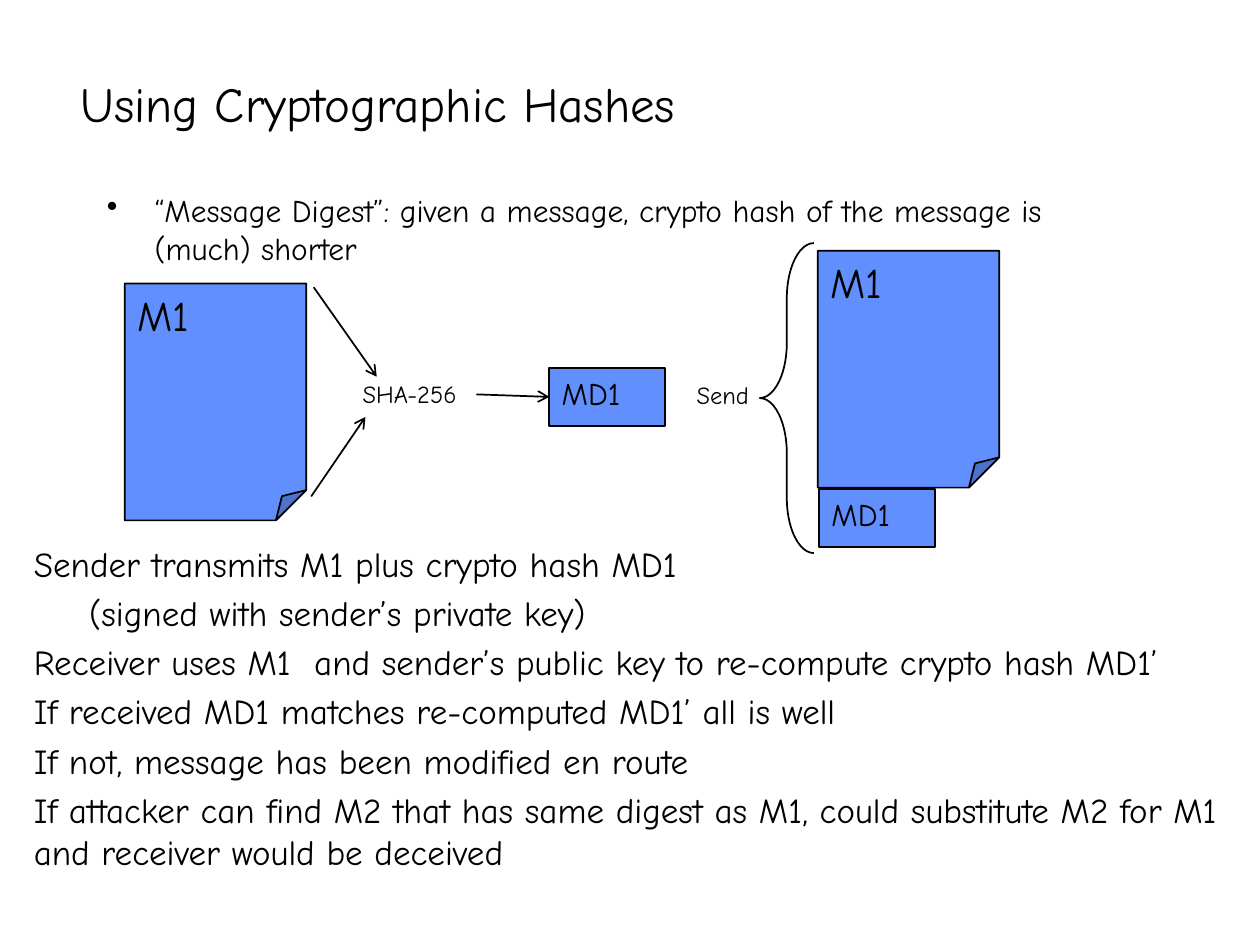
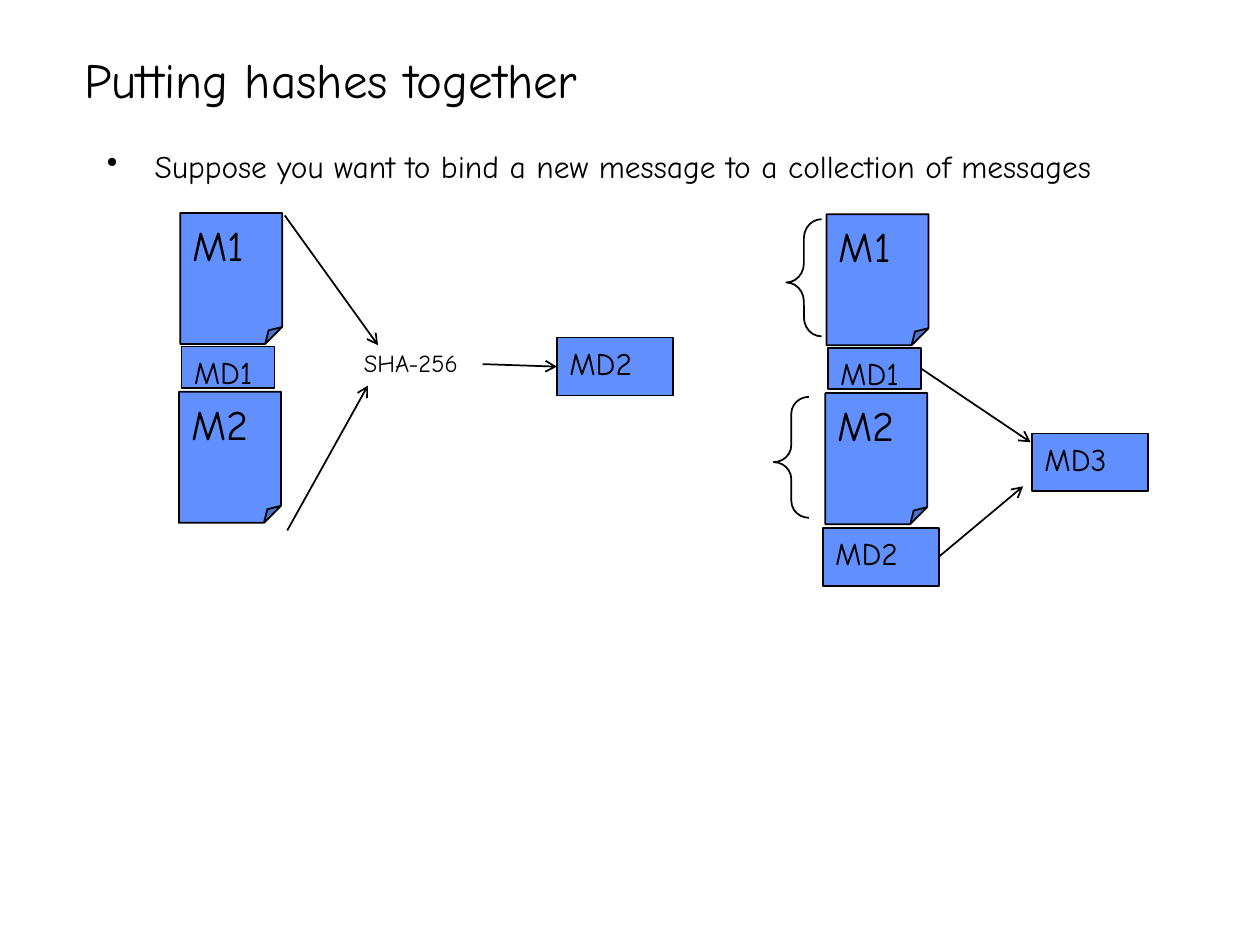
"""Build two slides on message digests and chained cryptographic hashes."""
import pptx
import pptx.dml.color
import pptx.enum.shapes
import pptx.enum.text
import pptx.oxml.ns
import pptx.util
from lxml import etree

Inches = pptx.util.Inches
Pt = pptx.util.Pt
PRESET = pptx.enum.shapes.MSO_SHAPE
ANCHOR = pptx.enum.text.MSO_ANCHOR
TOP, LEFT, BOTTOM, RIGHT = range(4)

THEME = {
    "font": "Comic Neue",
    "ink": pptx.dml.color.RGBColor.from_string("000000"),
    "block": pptx.dml.color.RGBColor.from_string("618FFD"),
    "title": 28, "message": 24, "notes": 20, "body": 18, "digest": 18, "label": 14,
    "line": 1, "space_before": 0.2,
}

FRAME = {
    "word_wrap": True,
    "margin_left": Inches(0.1), "margin_right": Inches(0.1),
    "margin_top": Inches(0.05), "margin_bottom": Inches(0.05),
}

BLOCKS = {
    "page": (PRESET.FOLDED_CORNER, 1.44, 1.88, "message"),
    "small page": (PRESET.FOLDED_CORNER, 0.81, 1.04, "message"),
    "digest": (PRESET.RECTANGLE, 0.92, 0.46, "digest"),
    "small digest": (PRESET.RECTANGLE, 0.74, 0.33, "digest"),
}


def bound_messages(side, left, top):
    """Return the M1, MD1, M2 stack placed from its left and top."""
    parts = [("M1", "small page", 0.01, 0), ("MD1", "small digest", 0.02, 1.06),
             ("M2", "small page", 0, 1.42)]
    return [(f"{side} {text}", text, kind, left + dx, top + dy)
            for text, kind, dx, dy in parts]


SLIDES = [
    {
        "title": ("Using Cryptographic Hashes", 0.54, 0.19),
        "point": ("“Message Digest”: given a message, crypto hash of the message is "
                  "(much) shorter", 0.75, 1.47, 8.4, 0.89),
        "blocks": [
            ("message", "M1", "page", 0.99, 2.25),
            ("digest", "MD1", "digest", 4.36, 2.92),
            ("sent message", "M1", "page", 6.49, 1.99),
            ("sent digest", "MD1", "digest", 6.5, 3.88),
        ],
        "labels": [("SHA-256", 2.78, 2.96), ("Send", 5.43, 2.97)],
        "arrows": [
            ((2.49, 2.28), (2.99, 2.99)),
            ((2.47, 3.94), (2.9, 3.31)),
            ((3.78, 3.13), ("digest", LEFT)),
        ],
        "braces": [(6.03, 1.93, 0.43, 2.46, 1.02, 0.5)],
        "notes": [
            ("Sender transmits M1 plus crypto hash MD1", 0),
            ("(signed with sender’s private key)", 1),
            ("Receiver uses M1  and sender’s public key to re-compute crypto hash MD1’", 0),
            ("If received MD1 matches re-computed MD1’ all is well", 0),
            ("If not, message has been modified en route", 0),
            ("If attacker can find M2 that has same digest as M1, could substitute M2 "
             "for M1 and receiver would be deceived", 0),
        ],
    },
    {
        "title": ("Putting hashes together", 0.57, 0),
        "point": ("Suppose you want to bind a new message to a collection of messages",
                  0.75, 1.12, 8.5, 4.5),
        "blocks": [
            *bound_messages("hashed", 1.42, 1.69),
            ("digest", "MD2", "digest", 4.42, 2.68),
            *bound_messages("sent", 6.55, 1.7),
            ("sent digest", "MD2", "digest", 6.53, 4.19),
            ("next digest", "MD3", "digest", 8.19, 3.44),
        ],
        "labels": [("SHA-256", 2.79, 2.71)],
        "arrows": [
            ((2.26, 1.71), (3, 2.74)),
            ((2.28, 4.21), (2.92, 3.06)),
            ((3.83, 2.89), ("digest", LEFT)),
            (("sent MD1", RIGHT), (8.18, 3.51)),
            (("sent digest", RIGHT), (8.12, 3.86)),
        ],
        "braces": [(6.14, 3.15, 0.28, 0.96, 0.48, 0.54),
                   (6.24, 1.74, 0.28, 0.93, 0.54, 0.54)],
        "notes": [],
    },
]


def apply_format(target, values):
    for attribute, value in values.items():
        setattr(target, attribute, value)


def write(paragraph, text, role):
    run = paragraph.add_run()
    run.text = text
    apply_format(run.font, {"name": THEME["font"], "size": Pt(THEME[role])})
    run.font.color.rgb = THEME["ink"]
    paragraph.alignment = pptx.enum.text.PP_ALIGN.LEFT


def space(paragraph, role):
    paragraph.space_before = Pt(THEME[role] * THEME["space_before"])


def indent(paragraph, margin, first_line, bullet=None):
    properties = paragraph._p.get_or_add_pPr()
    properties.set("marL", str(Inches(margin)))
    properties.set("indent", str(Inches(first_line)))
    if bullet:
        etree.SubElement(properties, pptx.oxml.ns.qn("a:buChar"), char=bullet)


def add_text(slide, box, text, role, anchor=ANCHOR.TOP):
    frame = slide.shapes.add_textbox(*map(Inches, box)).text_frame
    apply_format(frame, {**FRAME, "vertical_anchor": anchor})
    write(frame.paragraphs[0], text, role)
    return frame


def outline(part):
    part.line.color.rgb = THEME["ink"]
    part.line.width = Pt(THEME["line"])


def add_block(slide, text, kind, left, top):
    preset, width, height, role = BLOCKS[kind]
    block = slide.shapes.add_shape(preset, *map(Inches, (left, top, width, height)))
    block.shadow.inherit = False
    block.fill.solid()
    block.fill.fore_color.rgb = THEME["block"]
    outline(block)
    apply_format(block.text_frame, {**FRAME, "vertical_anchor": ANCHOR.TOP})
    write(block.text_frame.paragraphs[0], text, role)
    return block


def add_brace(slide, left, top, width, height, curl, middle):
    brace = slide.shapes.add_shape(PRESET.LEFT_BRACE,
                                   *map(Inches, (left, top, width, height)))
    brace.shadow.inherit = False
    brace.fill.background()
    outline(brace)
    brace.adjustments[0] = curl
    brace.adjustments[1] = middle


def add_arrow(slide, start, end, blocks):
    joined = [point[0] in blocks for point in (start, end)]
    places = [(0, 0) if join else point for join, point in zip(joined, (start, end))]
    arrow = slide.shapes.add_connector(pptx.enum.shapes.MSO_CONNECTOR.STRAIGHT,
                                       *map(Inches, places[0] + places[1]))
    connects = (arrow.begin_connect, arrow.end_connect)
    for join, connect, point in zip(joined, connects, (start, end)):
        if join:
            connect(blocks[point[0]], point[1])
    outline(arrow)
    etree.SubElement(arrow.line._get_or_add_ln(), pptx.oxml.ns.qn("a:tailEnd"), type="arrow")
    etree.SubElement(arrow._element.spPr, pptx.oxml.ns.qn("a:effectLst"))


def add_notes(slide, notes):
    (first, _), *others = notes
    frame = add_text(slide, (0.17, 4.26, 9.83, 2.82), first, "notes")
    space(frame.paragraphs[0], "notes")
    for text, level in others:
        paragraph = frame.add_paragraph()
        write(paragraph, text, "notes")
        space(paragraph, "notes")
        if level:
            paragraph.level = level
            indent(paragraph, 0.44, 0)


def build_slide(deck, content):
    slide = deck.slides.add_slide(deck.slide_layouts[6])
    title, left, top = content["title"]
    add_text(slide, (left, top, 8.5, 1.25), title, "title", ANCHOR.MIDDLE)
    point, *box = content["point"]
    bullet = add_text(slide, box, point, "body").paragraphs[0]
    space(bullet, "body")
    indent(bullet, 0.38, -0.38, "•")
    blocks = {key: add_block(slide, *block) for key, *block in content["blocks"]}
    for text, left, top in content["labels"]:
        add_text(slide, (left, top, 1.15, 0.34), text, "label")
    for start, end in content["arrows"]:
        add_arrow(slide, start, end, blocks)
    for brace in content["braces"]:
        add_brace(slide, *brace)
    if content["notes"]:
        add_notes(slide, content["notes"])


def main():
    deck = pptx.Presentation()
    apply_format(deck, {"slide_width": Inches(10), "slide_height": Inches(7.5)})
    for content in SLIDES:
        build_slide(deck, content)
    deck.save("out.pptx")


if __name__ == "__main__":
    main()
